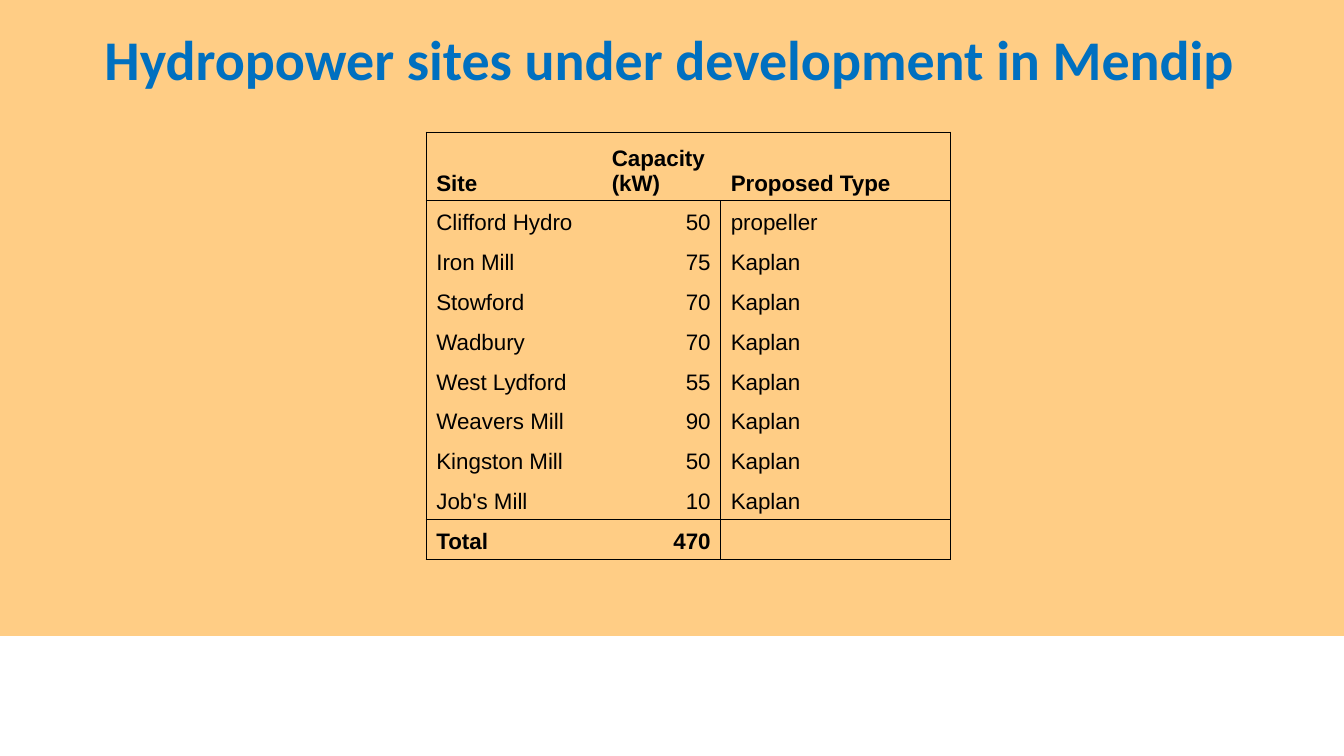
import pptx
import pptx.dml.color
import pptx.enum.shapes
import pptx.enum.text
import pptx.oxml
import pptx.oxml.ns
import pptx.util
from lxml import etree

Pt = pptx.util.Pt
qn = pptx.oxml.ns.qn

HEADER = ("Site", "Capacity (kW)", "Proposed Type")
SITES = [
    ("Clifford Hydro", 50, "propeller"),
    ("Iron Mill", 75, "Kaplan"),
    ("Stowford", 70, "Kaplan"),
    ("Wadbury", 70, "Kaplan"),
    ("West Lydford", 55, "Kaplan"),
    ("Weavers Mill", 90, "Kaplan"),
    ("Kingston Mill", 50, "Kaplan"),
    ("Job's Mill", 10, "Kaplan"),
]
TOTAL = ("Total", sum(site[1] for site in SITES), "")
COLUMN_SHARES = (1.74, 1.18, 2.28)
HEADER_HEIGHT = 49
TEXT_SIZE = 16


def color(value):
    """Return the colour for a hex string."""
    return pptx.dml.color.RGBColor.from_string(value)


def format_runs(paragraph, font_name, size, hex_color, bold):
    """Apply one character format to every run of a paragraph."""
    for run in paragraph.runs:
        run.font.name = font_name
        run.font.size = Pt(size)
        run.font.bold = bold
        run.font.color.rgb = color(hex_color)


def add_band(slide, left, top, width, height):
    """Place the translucent orange band behind the title."""
    band = slide.shapes.add_shape(
        pptx.enum.shapes.MSO_SHAPE.RECTANGLE, Pt(left), Pt(top), Pt(width), Pt(height))
    band.shadow.inherit = False
    band.line.fill.background()
    band.fill.solid()
    band.fill.fore_color.rgb = color("FFAA2D")
    fill_color = band.element.spPr.find(qn("a:solidFill")).find(qn("a:srgbClr"))
    etree.SubElement(fill_color, qn("a:alpha")).set("val", "58000")
    slide.shapes.title.element.addprevious(band.element)


def add_title(slide, left, top, width, height):
    """Fill and position the title placeholder."""
    title = slide.shapes.title
    title.left, title.top, title.width, title.height = Pt(left), Pt(top), Pt(width), Pt(height)
    text_frame = title.text_frame
    text_frame.text = "Hydropower sites under development in Mendip"
    text_frame.word_wrap = True
    text_frame.auto_size = pptx.enum.text.MSO_AUTO_SIZE.NONE
    text_frame.vertical_anchor = pptx.enum.text.MSO_ANCHOR.MIDDLE
    paragraph = text_frame.paragraphs[0]
    paragraph.alignment = pptx.enum.text.PP_ALIGN.CENTER
    format_runs(paragraph, "Calibri", 40, "0070C0", True)


def set_borders(cell, sides):
    """Draw the named sides (L, R, T, B) of a cell and hide the others."""
    properties = cell._tc.get_or_add_tcPr()
    for position, side in enumerate("LRTB"):
        line = etree.Element(qn("a:ln" + side), w=str(Pt(1)))
        if side in sides:
            fill = etree.SubElement(line, qn("a:solidFill"))
            etree.SubElement(fill, qn("a:srgbClr")).set("val", "000000")
        else:
            etree.SubElement(line, qn("a:noFill"))
        properties.insert(position, line)


def border_sides(row, column, last_row):
    """Return the visible sides of the cell at a row and column."""
    sides = ""
    if column == 0 or (column == 2 and row > 0):
        sides += "L"
    if column == 2 or (column == 1 and row > 0):
        sides += "R"
    if row in (0, 1, last_row):
        sides += "T"
    if row in (0, last_row - 1, last_row):
        sides += "B"
    return sides


def fill_cell(cell, value, bold):
    """Write one value into a cell, numbers aligned to the right."""
    cell.fill.background()
    cell.vertical_anchor = pptx.enum.text.MSO_ANCHOR.BOTTOM
    paragraph = cell.text_frame.paragraphs[0]
    paragraph.text = str(value)
    right = isinstance(value, int)
    paragraph.alignment = pptx.enum.text.PP_ALIGN.RIGHT if right else pptx.enum.text.PP_ALIGN.LEFT
    format_runs(paragraph, "Arial", TEXT_SIZE, "000000", bold)
    if not paragraph.runs:
        etree.SubElement(paragraph._p, qn("a:endParaRPr")).set("sz", str(TEXT_SIZE * 100))


def add_sites_table(slide, left, top, width, height):
    """Place the table of sites with its header and total row."""
    records = [HEADER, *SITES, TOTAL]
    last_row = len(records) - 1
    table = slide.shapes.add_table(
        len(records), len(HEADER), Pt(left), Pt(top), Pt(width), Pt(height)).table
    table.first_row = table.horz_banding = False
    for column, share in zip(table.columns, COLUMN_SHARES):
        column.width = Pt(width * share / sum(COLUMN_SHARES))
    for row, record in enumerate(records):
        body_height = (height - HEADER_HEIGHT) / last_row
        table.rows[row].height = Pt(body_height if row else HEADER_HEIGHT)
        for column, value in enumerate(record):
            cell = table.cell(row, column)
            fill_cell(cell, value, row in (0, last_row))
            set_borders(cell, border_sides(row, column, last_row))


def main():
    """Build and save the presentation."""
    presentation = pptx.Presentation()
    presentation.slide_width, presentation.slide_height = Pt(960), Pt(540)
    slide = presentation.slides.add_slide(presentation.slide_layouts[5])
    add_band(slide, 0, 0, 960, 454.3)
    add_title(slide, 64, 0, 828, 83.5)
    add_sites_table(slide, 304.5, 94.5, 374.5, 305)
    presentation.save("out.pptx")


if __name__ == "__main__":
    main()
